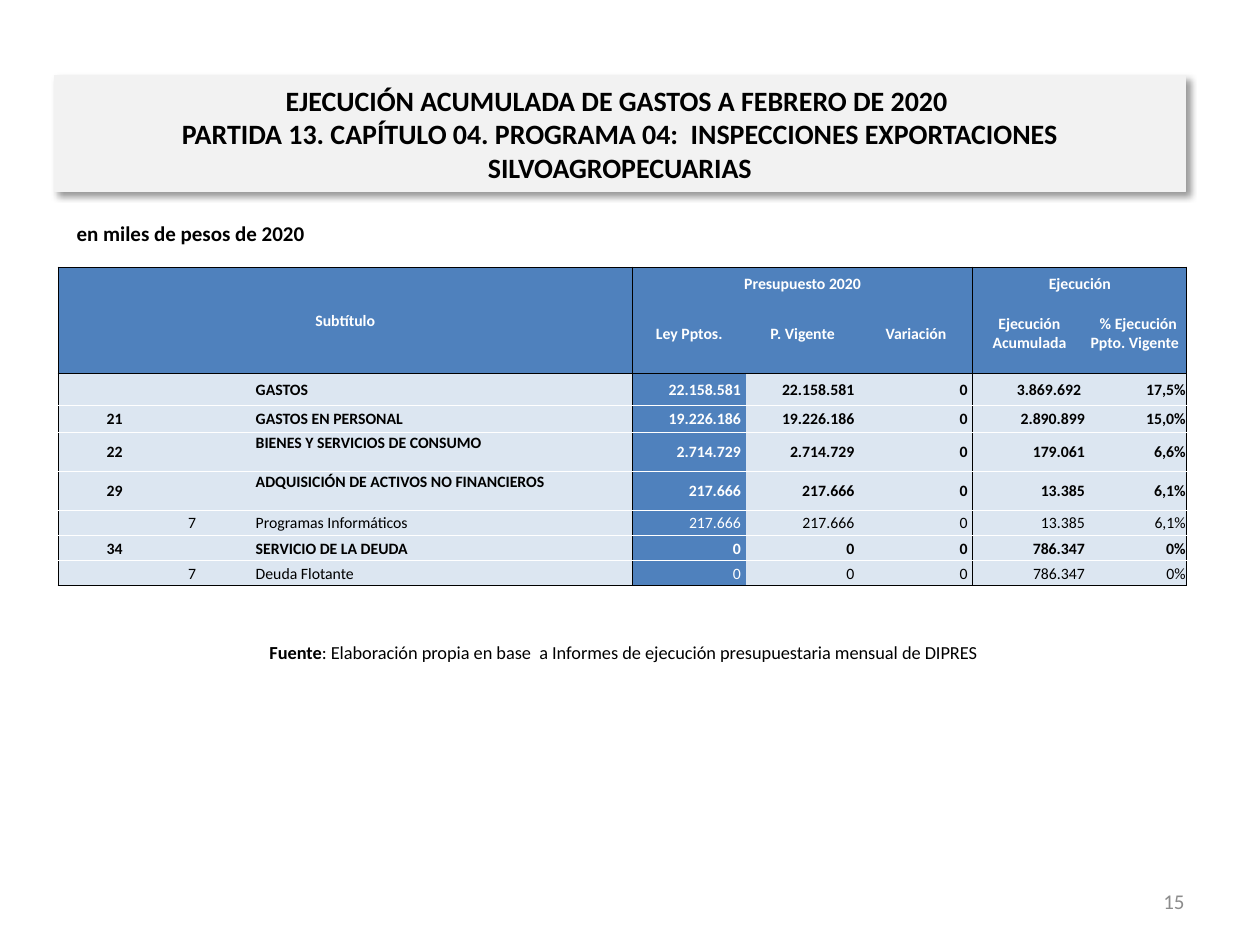
from dataclasses import dataclass

from lxml import etree
from pptx import Presentation
from pptx import util as u
from pptx.dml.color import RGBColor
from pptx.enum import shapes, text
from pptx.oxml import parse_xml
from pptx.oxml.ns import nsdecls, qn

LEFT, MID, RIGHT, JUST = (text.PP_ALIGN.LEFT, text.PP_ALIGN.CENTER,
                          text.PP_ALIGN.RIGHT, text.PP_ALIGN.JUSTIFY)
TOP, CENTER, BASE = (text.MSO_ANCHOR.TOP, text.MSO_ANCHOR.MIDDLE,
                     text.MSO_ANCHOR.BOTTOM)


@dataclass
class Theme:
    font: str = "Calibri"
    ink: str = "000000"
    white: str = "FFFFFF"
    gray: str = "8C8C8C"
    panel: str = "F2F2F2"
    blue: str = "4F81BD"
    pale: str = "DCE6F1"
    title: float = 16
    body: float = 12
    source: float = 10.5
    cell: float = 9
    rule: float = 0.5


class Deck:
    def __init__(self, theme, slide):
        self.theme, self.slide = theme, slide

    def style(self, par, size, color, bold, align):
        par.alignment = align
        for run in par.runs:
            font = run.font
            font.name, font.size, font.bold = self.theme.font, u.Pt(size), bold
            font.color.rgb = RGBColor.from_string(color)

    def label(self, box, words, size, color=None, bold=False, align=LEFT, anchor=CENTER):
        frame = self.slide.shapes.add_textbox(*map(u.Inches, box)).text_frame
        frame.word_wrap, frame.vertical_anchor = True, anchor
        par = frame.paragraphs[0]
        par.text = words
        self.style(par, size, color or self.theme.ink, bold, align)
        return par

    def banner(self, box, words):
        look = self.theme
        shape = self.slide.shapes.add_shape(
            shapes.MSO_SHAPE.RECTANGLE, *map(u.Inches, box))
        shape.fill.solid()
        shape.fill.fore_color.rgb = RGBColor.from_string(look.panel)
        shape.line.color.rgb = RGBColor.from_string(look.panel)
        shape.line.width = u.Pt(0.75)
        shape.shadow.inherit = False
        glow = shape._element.spPr.find(qn("a:effectLst"))
        glow.append(parse_xml(
            f'<a:outerShdw {nsdecls("a")} blurRad="{u.Pt(4)}" dist="{u.Pt(3)}" '
            f'dir="2700000" algn="tl" rotWithShape="0"><a:srgbClr val="{look.ink}">'
            '<a:alpha val="40000"/></a:srgbClr></a:outerShdw>'))
        frame = shape.text_frame
        frame.word_wrap, frame.vertical_anchor = True, CENTER
        frame.margin_left = frame.margin_right = u.Inches(0.11)
        par = frame.paragraphs[0]
        par.text = words
        self.style(par, look.title, look.ink, True, MID)

    def grid(self, left, top, cols, rows):
        table = self.slide.shapes.add_table(
            len(rows), len(cols), u.Inches(left), u.Inches(top),
            u.Inches(sum(cols)), u.Inches(sum(rows))).table
        table.first_row = table.horz_banding = False
        table._tbl.tblPr.find(qn("a:tableStyleId")).text = (
            "{2D5ABB26-0587-4C30-8999-92F81FD0307C}")
        for col, wide in zip(table.columns, cols):
            col.width = u.Inches(wide)
        for row, high in zip(table.rows, rows):
            row.height = u.Inches(high)
        return table

    def cell(self, cell, words, fill, color, bold, align, anchor=CENTER, pad=0.01):
        cell.margin_left = cell.margin_top = u.Inches(0.01)
        cell.margin_right, cell.margin_bottom = u.Inches(pad), 0
        cell.vertical_anchor = anchor
        par = cell.text_frame.paragraphs[0]
        par.text = words
        self.style(par, self.theme.cell, color, bold, align)
        if not words:
            end = etree.SubElement(par._p, qn("a:endParaRPr"))
            end.set("sz", str(self.theme.cell * 100))
        cell.fill.solid()
        cell.fill.fore_color.rgb = RGBColor.from_string(fill)

    def edges(self, cell, sides):
        props = cell._tc.get_or_add_tcPr()
        for side in "LRTB":
            color = sides.get(side)
            paint = (f'<a:solidFill><a:srgbClr val="{color}"/></a:solidFill>'
                     if color else "<a:noFill/>")
            props.append(parse_xml(
                f'<a:ln{side} {nsdecls("a")} w="{u.Pt(self.theme.rule)}">'
                f'{paint}</a:ln{side}>'))


COLS = [0.9, 0.33, 0.33, 3, 0.9, 0.9, 0.9, 0.9, 0.8]
ROWS = [0.21, 0.63, 0.26, 0.21, 0.31, 0.31, 0.2, 0.2, 0.2]
SPANS = {(0, 0): (2, 4), (0, 4): (1, 3), (0, 7): (1, 2)}
HEAD = [
    ["Subtítulo", "", "", "", "Presupuesto 2020", "", "", "Ejecución", ""],
    ["", "", "", "", "Ley Pptos.", "P. Vigente", "Variación",
     "Ejecución Acumulada", " % Ejecución Ppto. Vigente "],
]
BODY = [
    ["", "", "GASTOS", "22.158.581", "3.869.692", "17,5%"],
    ["21", "", "GASTOS EN PERSONAL", "19.226.186", "2.890.899", "15,0%"],
    ["22", "", "BIENES Y SERVICIOS DE CONSUMO", "2.714.729", "179.061", "6,6%"],
    ["29", "", "ADQUISICIÓN DE ACTIVOS NO FINANCIEROS", "217.666", "13.385", "6,1%"],
    ["", "7", "Programas Informáticos", "217.666", "13.385", "6,1%"],
    ["34", "", "SERVICIO DE LA DEUDA", "0", "786.347", "0%"],
    ["", "7", "Deuda Flotante", "0", "786.347", "0%"],
]


def sides(theme, r, c):
    high, wide = SPANS.get((r, c), (1, 1))
    low, far = r + high, c + wide
    lines = {}
    if c in (0, 4, 7):
        lines["L"] = theme.ink
    if far in (4, 7, 9):
        lines["R"] = theme.ink
    if r != 1:
        lines["T"] = theme.ink if r in (0, 2) else theme.white
    if low != 1:
        lines["B"] = theme.ink if low in (2, len(ROWS)) else theme.white
    return lines


def budget(deck):
    theme = deck.theme
    table = deck.grid(0.46, 2.12, COLS, ROWS)
    for (r, c), (high, wide) in SPANS.items():
        table.cell(r, c).merge(table.cell(r + high - 1, c + wide - 1))
    full = [[code, item, "", name, law, law, "0", spent, share]
            for code, item, name, law, spent, share in BODY]
    for r, row in enumerate(HEAD + full):
        for c, words in enumerate(row):
            cell = table.cell(r, c)
            deck.edges(cell, sides(theme, r, c))
            if r < 2:
                anchor = BASE if r == 0 and c > 0 else CENTER
                deck.cell(cell, words, theme.blue, theme.white, True, MID, anchor)
                continue
            fill, color = ((theme.blue, theme.white) if c == 4
                           else (theme.pale, theme.ink))
            align = MID if c < 3 else JUST if c == 3 else RIGHT
            anchor = TOP if c == 3 and ROWS[r] > 0.3 else CENTER
            pad = 0.04 if c in (4, 5, 6) or (r, c) == (2, 7) else 0.01
            deck.cell(cell, words, fill, color, not row[1], align, anchor, pad)


def main():
    show = Presentation()
    show.slide_width, show.slide_height = u.Inches(10), u.Inches(7.5)
    theme = Theme()
    deck = Deck(theme, show.slides.add_slide(show.slide_layouts[6]))
    note = deck.label((0.5, 5.03, 8.9, 0.29), "Fuente", theme.source, bold=True, align=MID)
    note.add_run().text = (": Elaboración propia en base  a Informes de ejecución "
                           "presupuestaria mensual de DIPRES")
    deck.style(note, theme.source, theme.ink, False, MID)
    note.runs[0].font.bold = True
    deck.label((7.17, 6.95, 2.33, 0.4), "15", theme.body, theme.gray, align=RIGHT)
    deck.label((0.51, 1.7, 8.2, 0.39), "en miles de pesos de 2020", theme.body,
               bold=True, anchor=TOP)
    deck.banner((0.43, 0.6, 8.98, 0.92),
                "EJECUCIÓN ACUMULADA DE GASTOS A FEBRERO DE 2020 \v"
                "PARTIDA 13. CAPÍTULO 04. PROGRAMA 04:  INSPECCIONES EXPORTACIONES "
                "SILVOAGROPECUARIAS")
    budget(deck)
    show.save("out.pptx")


if __name__ == "__main__":
    main()
